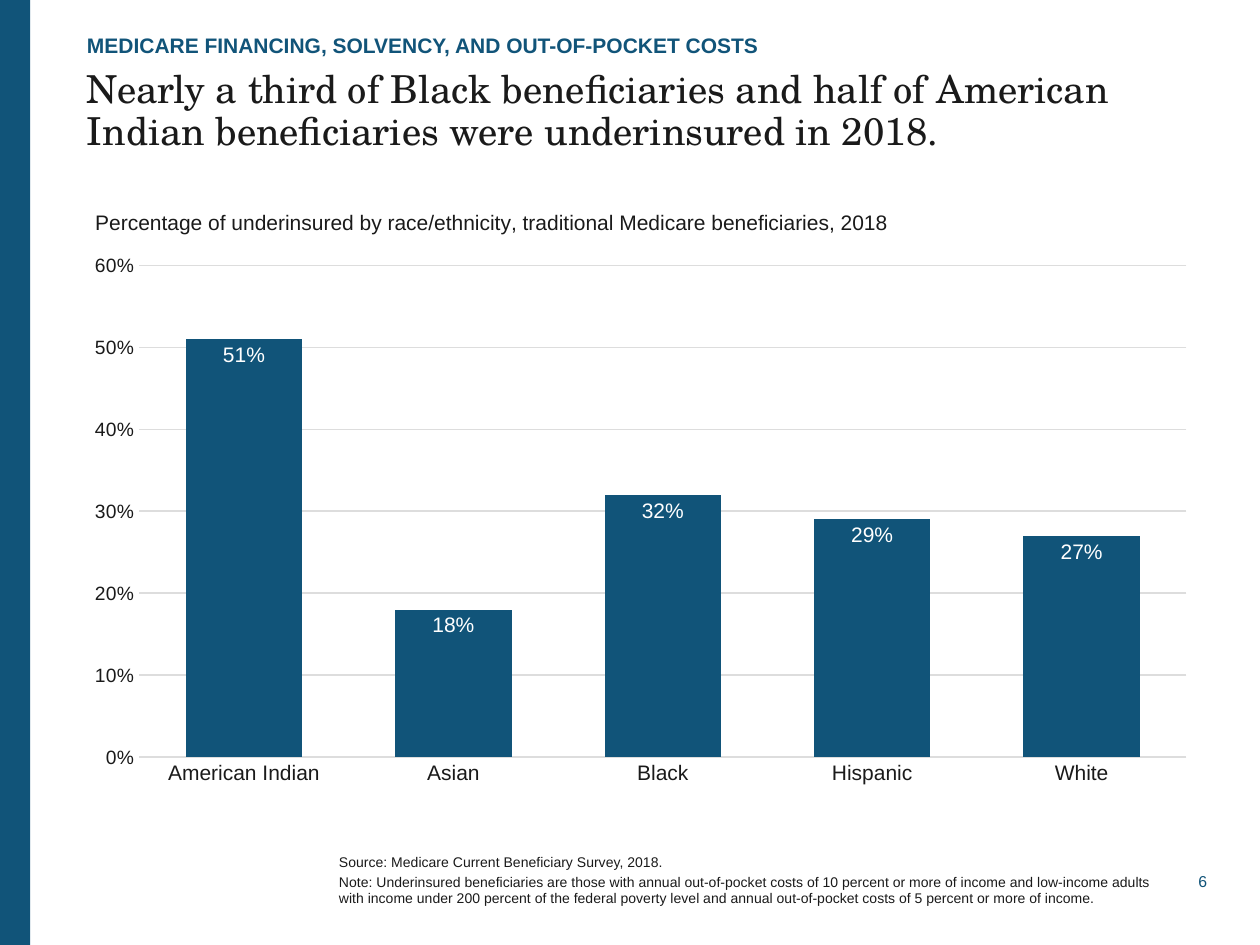
from dataclasses import dataclass

from lxml import etree
from pptx import Presentation
from pptx.chart import data as chart_data
from pptx.dml import color
from pptx.enum import chart as ch, shapes, text
from pptx.oxml import ns
from pptx.util import Inches, Pt


@dataclass(frozen=True)
class Theme:
    blue: color.RGBColor = color.RGBColor.from_string("115479")
    ink: color.RGBColor = color.RGBColor.from_string("1A1A1A")
    grid: color.RGBColor = color.RGBColor.from_string("DDDDDD")
    white: color.RGBColor = color.RGBColor.from_string("FFFFFF")
    sans: str = "Arial"
    serif: str = "TeX Gyre Schola"
    headline: int = 22
    label: int = 12
    axis: int = 11
    page: int = 9
    note: int = 8


THEME = Theme()


def set_font(font, size, rgb=THEME.ink, name=THEME.sans, bold=False):
    font.size, font.name, font.bold = Pt(size), name, bold
    font.color.rgb = rgb


def add_text(slide, box, lines, size, rgb=THEME.ink, name=THEME.sans, bold=False,
             anchor=text.MSO_ANCHOR.TOP, align=text.PP_ALIGN.LEFT,
             line_spacing=1.0, gap=0, wrap=True):
    frame = slide.shapes.add_textbox(*map(Inches, box)).text_frame
    frame.margin_left = frame.margin_right = 0
    frame.margin_top = frame.margin_bottom = 0
    frame.word_wrap, frame.vertical_anchor = wrap, anchor
    for i, line in enumerate(lines):
        paragraph = frame.paragraphs[0] if i == 0 else frame.add_paragraph()
        paragraph.text = line
        paragraph.alignment, paragraph.line_spacing = align, line_spacing
        if i:
            paragraph.space_before = Pt(gap)
        set_font(paragraph.font, size, rgb, name, bold)


def set_layout(parent, index, **fractions):
    """Place a chart part by fractions of the chart's size."""
    for old in parent.findall(ns.qn("c:layout")):
        parent.remove(old)
    layout = etree.Element(ns.qn("c:layout"))
    manual = etree.SubElement(layout, ns.qn("c:manualLayout"))
    for tag, value in fractions.items():
        etree.SubElement(manual, ns.qn(f"c:{tag}")).set("val", str(value))
    parent.insert(index, layout)


def add_side_band(slide, box):
    band = slide.shapes.add_shape(shapes.MSO_SHAPE.RECTANGLE, *map(Inches, box))
    band.shadow.inherit = False
    band.fill.solid()
    band.fill.fore_color.rgb = THEME.blue
    band.line.fill.background()


def add_header(slide, box):
    left, top, width, height = box
    add_text(slide, (left, top, width, 0.27),
             ["MEDICARE FINANCING, SOLVENCY, AND OUT-OF-POCKET COSTS"],
             THEME.label, THEME.blue, bold=True, anchor=text.MSO_ANCHOR.BOTTOM)
    add_text(slide, (left, top + 0.37, width, height - 0.37),
             ["Nearly a third of Black beneficiaries and half of American "
              "Indian beneficiaries were underinsured in 2018."],
             THEME.headline, name=THEME.serif, line_spacing=0.9)


def add_underinsured_chart(slide, box):
    rates = chart_data.CategoryChartData(number_format="0%")
    rates.categories = ["American Indian", "Asian", "Black", "Hispanic", "White"]
    rates.add_series("Series 1", [0.51, 0.18, 0.32, 0.29, 0.27])
    chart = slide.shapes.add_chart(
        ch.XL_CHART_TYPE.COLUMN_CLUSTERED, *map(Inches, box), rates).chart
    chart.has_legend = False
    set_font(chart.font, 10)

    # Title
    chart.has_title = True
    heading = chart.chart_title.text_frame.paragraphs[0]
    heading.text = ("Percentage of underinsured by race/ethnicity, "
                    "traditional Medicare beneficiaries, 2018")
    heading.alignment = text.PP_ALIGN.LEFT
    set_font(heading.font, THEME.label)
    title = chart.chart_title._element
    set_layout(title, 1, xMode="edge", yMode="edge", x=0.004, y=0.007)

    # Plot area and columns
    plot = chart.plots[0]
    set_layout(plot._element.getparent(), 0, layoutTarget="inner", xMode="edge",
               yMode="edge", x=0.047, y=0.105, w=0.939, h=0.81)
    plot.gap_width, plot.overlap, plot.vary_by_categories = 80, -27, False
    columns = plot.series[0]
    columns.format.fill.solid()
    columns.format.fill.fore_color.rgb = THEME.blue
    labels = columns.data_labels
    labels.show_value = True
    labels.position = ch.XL_LABEL_POSITION.INSIDE_END
    labels.number_format, labels.number_format_is_linked = "0%", False
    set_font(labels.font, THEME.label, THEME.white)

    # Axes
    groups, percent = chart.category_axis, chart.value_axis
    for axis, size in ((groups, THEME.label), (percent, THEME.axis)):
        axis.major_tick_mark = axis.minor_tick_mark = ch.XL_TICK_MARK.NONE
        set_font(axis.tick_labels.font, size)
    percent.minimum_scale, percent.maximum_scale, percent.major_unit = 0, 0.6, 0.1
    percent.tick_labels.number_format = "0%"
    percent.tick_labels.number_format_is_linked = False
    percent.format.line.fill.background()
    percent.has_major_gridlines = True
    for line in (groups.format.line, percent.major_gridlines.format.line):
        line.color.rgb, line.width = THEME.grid, Pt(0.75)


def add_footer(slide, box):
    left, top, width, height = box
    add_text(slide, (left, top, 6.59, height),
             ["Source: Medicare Current Beneficiary Survey, 2018.",
              "Note: Underinsured beneficiaries are those with annual out-of-pocket "
              "costs of 10 percent or more of income and low-income adults with income "
              "under 200 percent of the federal poverty level and annual out-of-pocket "
              "costs of 5 percent or more of income."],
             THEME.note, anchor=text.MSO_ANCHOR.MIDDLE, gap=1.6)
    add_text(slide, (left + width - 0.31, top + 0.32, 0.31, 0.22), ["6"],
             THEME.page, THEME.blue, anchor=text.MSO_ANCHOR.MIDDLE,
             align=text.PP_ALIGN.RIGHT)


def main():
    deck = Presentation()
    deck.slide_width, deck.slide_height = Inches(10), Inches(7.5)
    slide = deck.slides.add_slide(deck.slide_layouts[6])
    add_side_band(slide, (0, 0, 0.24, 7.5))
    add_header(slide, (0.69, 0.19, 8.85, 1.17))
    add_underinsured_chart(slide, (0.69, 1.6, 8.85, 4.82))
    add_footer(slide, (2.69, 6.56, 6.89, 0.85))
    deck.save("out.pptx")


if __name__ == "__main__":
    main()
